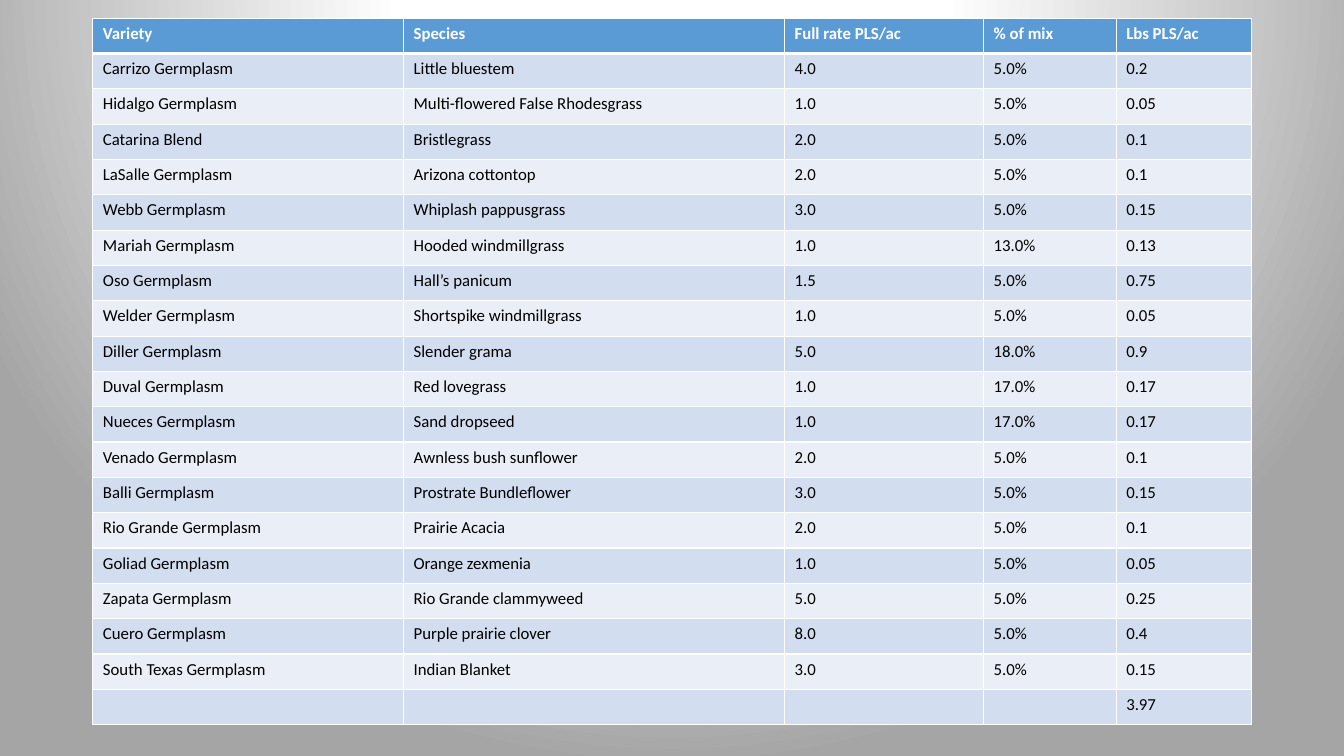
"""Build a slide with a table of a native seed mix and its planting rates."""
from pptx import Presentation, util as u
from pptx.dml.color import RGBColor
from pptx.oxml import parse_xml
from pptx.oxml.ns import nsdecls

HEADER = ("Variety", "Species", "Full rate PLS/ac", "% of mix", "Lbs PLS/ac")
SEEDS = [
    ("Carrizo Germplasm", "Little bluestem", "4.0", "5.0%", "0.2"),
    ("Hidalgo Germplasm", "Multi-flowered False Rhodesgrass", "1.0", "5.0%", "0.05"),
    ("Catarina Blend", "Bristlegrass", "2.0", "5.0%", "0.1"),
    ("LaSalle Germplasm", "Arizona cottontop", "2.0", "5.0%", "0.1"),
    ("Webb Germplasm", "Whiplash pappusgrass", "3.0", "5.0%", "0.15"),
    ("Mariah Germplasm", "Hooded windmillgrass", "1.0", "13.0%", "0.13"),
    ("Oso Germplasm", "Hall’s panicum", "1.5", "5.0%", "0.75"),
    ("Welder Germplasm", "Shortspike windmillgrass", "1.0", "5.0%", "0.05"),
    ("Diller Germplasm", "Slender grama", "5.0", "18.0%", "0.9"),
    ("Duval Germplasm", "Red lovegrass", "1.0", "17.0%", "0.17"),
    ("Nueces Germplasm", "Sand dropseed", "1.0", "17.0%", "0.17"),
    ("Venado Germplasm", "Awnless bush sunflower", "2.0", "5.0%", "0.1"),
    ("Balli Germplasm", "Prostrate Bundleflower", "3.0", "5.0%", "0.15"),
    ("Rio Grande Germplasm", "Prairie Acacia", "2.0", "5.0%", "0.1"),
    ("Goliad Germplasm", "Orange zexmenia", "1.0", "5.0%", "0.05"),
    ("Zapata Germplasm", "Rio Grande clammyweed", "5.0", "5.0%", "0.25"),
    ("Cuero Germplasm", "Purple prairie clover", "8.0", "5.0%", "0.4"),
    ("South Texas Germplasm", "Indian Blanket", "3.0", "5.0%", "0.15"),
]
TOTAL = ("", "", "", "", "3.97")
ROWS = [HEADER, *SEEDS, TOTAL]
COL_WIDTHS = (7.83, 9.6, 5.02, 3.34, 3.41)
ROW_HEIGHT = 0.89
LEFT, TOP = 2.34, 0.46
COLORS = {"header": "5B9BD5", "odd": "D2DEEF", "even": "EAEFF7",
          "white": "FFFFFF", "black": "000000", "edge": "A5A5A5"}
GLOW = ((0, "white"), (35, "white"), (100, "edge"))
FONT = {"name": "Calibri", "size": u.Pt(12)}


def set_background(s):
    """Fill the slide with a round glow from above its top edge."""
    stops = "".join(f'<a:gs pos="{pos * 1000}"><a:srgbClr val="{COLORS[c]}"/></a:gs>'
                    for pos, c in GLOW)
    s.element.cSld.insert(0, parse_xml(
        f'<p:bg {nsdecls("p", "a")}><p:bgPr><a:gradFill rotWithShape="1">'
        f'<a:gsLst>{stops}</a:gsLst><a:path path="circle">'
        '<a:fillToRect l="50000" t="-80000" r="50000" b="180000"/></a:path>'
        '</a:gradFill><a:effectLst/></p:bgPr></p:bg>'))


def set_borders(cell, top, bottom):
    """Draw white borders of the given top and bottom widths in points."""
    tcPr = cell._tc.get_or_add_tcPr()
    for i, (side, width) in enumerate((("L", 1), ("R", 1), ("T", top), ("B", bottom))):
        tcPr.insert(i, parse_xml(
            f'<a:ln{side} {nsdecls("a")} w="{u.Pt(width)}"><a:solidFill>'
            f'<a:srgbClr val="{COLORS["white"]}"/></a:solidFill></a:ln{side}>'))


def fill_cell(cell, value, row):
    """Write and format one cell according to its row."""
    band = "header" if row == 0 else ("even", "odd")[row % 2]
    cell.fill.solid()
    cell.fill.fore_color.rgb = RGBColor.from_string(COLORS[band])
    set_borders(cell, 3 if row == 1 else 1, 3 if row == 0 else 1)
    p = cell.text_frame.paragraphs[0]
    if not value:
        p._p.get_or_add_endParaRPr().set("sz", "1200")
        return
    r = p.add_run()
    r.text = value
    for name, setting in {**FONT, "bold": row == 0}.items():
        setattr(r.font, name, setting)
    r.font.color.rgb = RGBColor.from_string(COLORS["black" if row else "white"])


def main():
    """Create and save the deck."""
    prs = Presentation()
    prs.slide_width, prs.slide_height = u.Cm(33.87), u.Cm(19.05)
    s = prs.slides.add_slide(prs.slide_layouts[6])
    set_background(s)
    table = s.shapes.add_table(
        len(ROWS), len(HEADER), u.Cm(LEFT), u.Cm(TOP),
        u.Cm(sum(COL_WIDTHS)), u.Cm(ROW_HEIGHT * len(ROWS))).table
    for col, width in zip(table.columns, COL_WIDTHS):
        col.width = u.Cm(width)
    for i, values in enumerate(ROWS):
        table.rows[i].height = u.Cm(ROW_HEIGHT)
        for j, value in enumerate(values):
            fill_cell(table.cell(i, j), value, i)
    prs.save("out.pptx")


if __name__ == "__main__":
    main()
